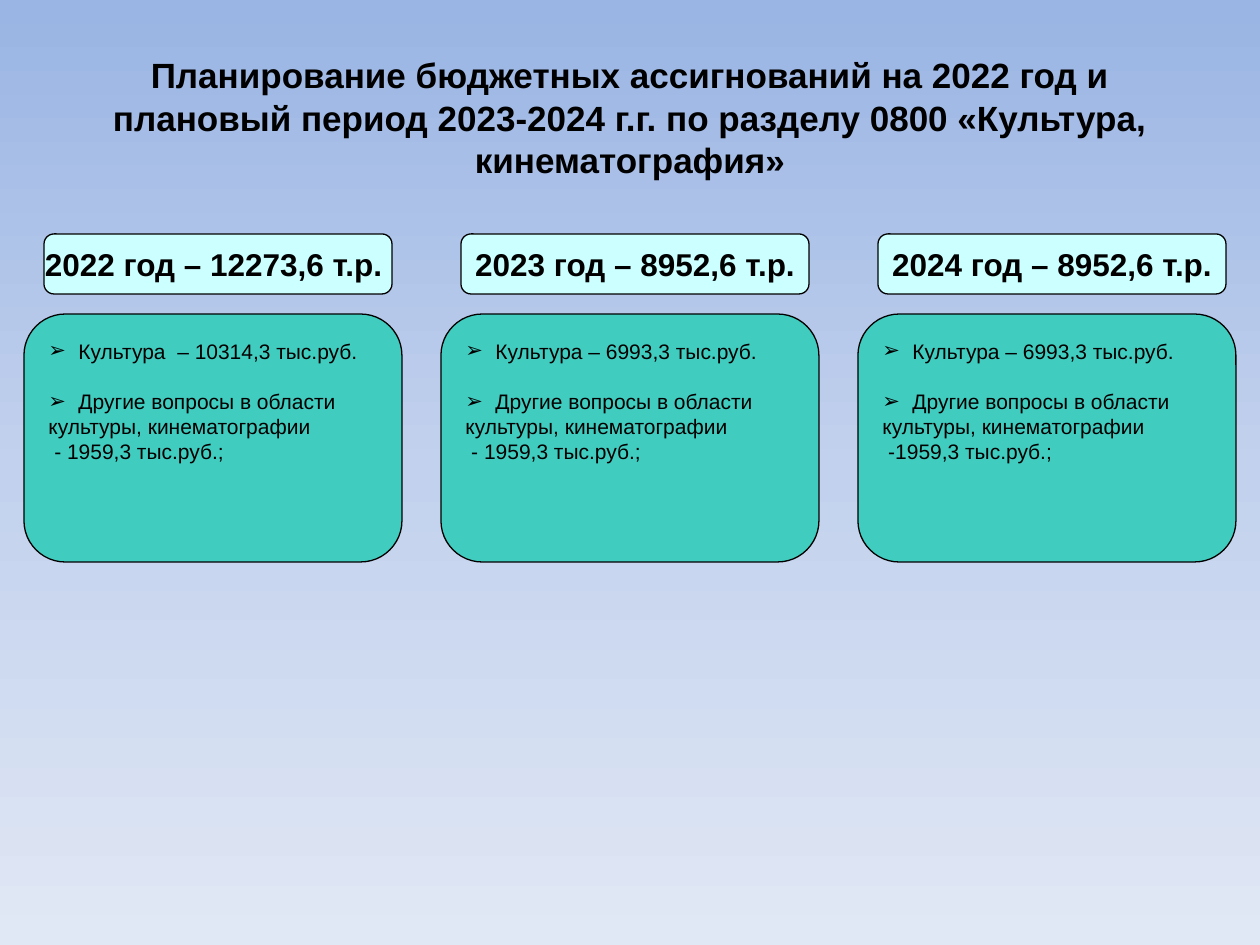
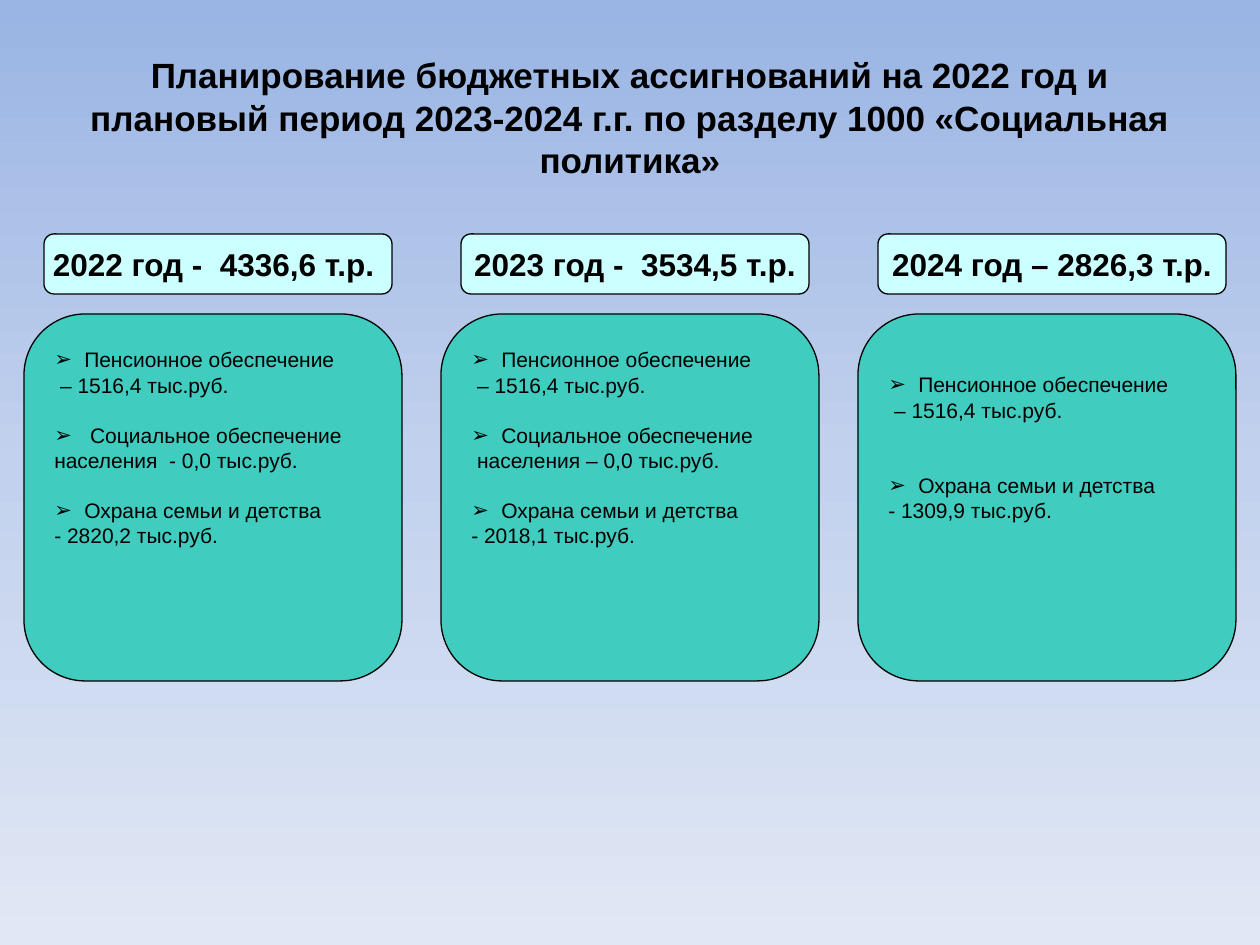
from dataclasses import dataclass
from typing import Any

from lxml import etree
from pptx import Presentation
from pptx import util as u
from pptx.dml.color import RGBColor
from pptx.enum import shapes, text
from pptx.oxml.ns import qn

PX = 914400 / 126
STEP = 417
LINE = 25
CORNER_INSET = 0.29289 * 0.16667


@dataclass(frozen=True)
class Theme:
    font: str = "Arial"
    ink: str = "000000"
    header: str = "CCFFFF"
    body: str = "40CCBF"
    gradient: tuple[tuple[int, str], ...] = ((0, "9AB5E4"), (50, "C2D1ED"), (100, "E1E8F5"))
    title_pt: int = 20
    header_pt: int = 18
    body_pt: int = 12
    line_pt: float = 0.75


@dataclass(frozen=True)
class Box:
    left: int
    top: int
    width: int
    height: int

    def column(self, index: int) -> "Box":
        return Box(self.left + index * STEP, self.top, self.width, self.height)

    def emu(self) -> list[u.Emu]:
        return [px(v) for v in (self.left, self.top, self.width, self.height)]


@dataclass(frozen=True)
class Item:
    heading: str
    details: tuple[str, ...]
    blank_lines: int = 1


@dataclass(frozen=True)
class Year:
    total: str
    items: tuple[Item, ...]
    text_top: int


@dataclass(frozen=True)
class Section:
    name: str
    body_height: int
    years: tuple[Year, ...]


THEME = Theme()
TITLE = Box(63, 38, 1134, 158)
HEADER = Box(44, 234, 348, 60)
BODY_LEFT, BODY_TOP, BODY_WIDTH = 24, 314, 378


def culture(total: str, amount: str, other: str) -> Year:
    return Year(total, (
        Item(f"Культура{amount}", ()),
        Item("Другие вопросы в области", ("культуры, кинематографии", other)),
    ), 24)


PENSION = Item("Пенсионное обеспечение", (" – 1516,4 тыс.руб.",))


def family(amount: str, blank_lines: int = 1) -> Item:
    return Item("Охрана семьи и детства", (f"- {amount} тыс.руб.",), blank_lines)


SECTIONS = (
    Section("0800 «Культура, кинематография»", 248, (
        culture("2022 год – 12273,6 т.р. ", "  – 10314,3 тыс.руб.", " - 1959,3 тыс.руб.;"),
        culture("2023 год – 8952,6 т.р.", " – 6993,3 тыс.руб.", " - 1959,3 тыс.руб.;"),
        culture("2024 год – 8952,6 т.р.", " – 6993,3 тыс.руб.", " -1959,3 тыс.руб.;"),
    )),
    Section("1000 «Социальная политика»", 367, (
        Year("2022 год -  4336,6 т.р. ", (
            PENSION,
            Item(" Социальное обеспечение", ("населения  - 0,0 тыс.руб.",)),
            family("2820,2"),
        ), 33),
        Year("2023 год -  3534,5 т.р.", (
            PENSION,
            Item("Социальное обеспечение", (" населения – 0,0 тыс.руб.",)),
            family("2018,1"),
        ), 33),
        Year("2024 год – 2826,3 т.р.", (PENSION, family("1309,9", 2)), 58),
    )),
)


def px(value: float) -> u.Emu:
    return u.Emu(round(value * PX))


def apply(target: Any, formats: dict[str, Any]) -> None:
    for name, value in formats.items():
        setattr(target, name, value)


def write(p: Any, content: str, size: int, bold: bool = False) -> None:
    r = p.add_run()
    r.text = content
    apply(r.font, {"name": THEME.font, "size": u.Pt(size), "bold": bold})
    r.font.color.rgb = RGBColor.from_string(THEME.ink)


def paint_background(s: Any) -> None:
    fill = s.background.fill
    fill.gradient()
    fill.gradient_angle = 270
    stops = s.element.find(".//" + qn("a:gsLst"))
    for stop in list(stops):
        stops.remove(stop)
    for position, color in THEME.gradient:
        stop = etree.SubElement(stops, qn("a:gs"), pos=str(position * 1000))
        etree.SubElement(stop, qn("a:srgbClr"), val=color)


def add_title(s: Any, name: str) -> None:
    tf = s.shapes.add_textbox(*TITLE.emu()).text_frame
    apply(tf, {"word_wrap": True, "vertical_anchor": text.MSO_ANCHOR.MIDDLE})
    p = tf.paragraphs[0]
    p.alignment = text.PP_ALIGN.CENTER
    content = f"Планирование бюджетных ассигнований на 2022 год и плановый период 2023-2024 г.г. по разделу {name}"
    write(p, content, THEME.title_pt, True)


def add_panel(s: Any, box: Box, color: str) -> Any:
    sp = s.shapes.add_shape(shapes.MSO_SHAPE.ROUNDED_RECTANGLE, *box.emu())
    sp.shadow.inherit = False
    sp.fill.solid()
    sp.fill.fore_color.rgb = RGBColor.from_string(color)
    sp.line.color.rgb = RGBColor.from_string(THEME.ink)
    sp.line.width = u.Pt(THEME.line_pt)
    return sp.text_frame


def add_header(s: Any, box: Box, total: str) -> None:
    tf = add_panel(s, box, THEME.header)
    apply(tf, {"word_wrap": False, "vertical_anchor": text.MSO_ANCHOR.MIDDLE})
    p = tf.paragraphs[0]
    p.alignment = text.PP_ALIGN.CENTER
    write(p, total, THEME.header_pt, True)


def add_bullet(p: Any) -> None:
    pPr = p._p.get_or_add_pPr()
    indent = px(30)
    pPr.set("marL", str(indent))
    pPr.set("indent", str(-indent))
    etree.SubElement(pPr, qn("a:buFont"), typeface=THEME.font)
    etree.SubElement(pPr, qn("a:buChar"), char="➢")


def add_body(s: Any, box: Box, year: Year) -> None:
    tf = add_panel(s, box, THEME.body)
    apply(tf, {
        "word_wrap": True,
        "vertical_anchor": text.MSO_ANCHOR.TOP,
        "margin_top": px(year.text_top - box.height * CORNER_INSET),
    })
    for i, item in enumerate(year.items):
        for j, content in enumerate((item.heading, *item.details)):
            p = tf.add_paragraph() if i or j else tf.paragraphs[0]
            p.alignment = text.PP_ALIGN.LEFT
            if j == 0:
                p.space_before = px(LINE * item.blank_lines if i else 0)
                add_bullet(p)
            write(p, content, THEME.body_pt)


def add_section(prs: Any, section: Section) -> None:
    s = prs.slides.add_slide(prs.slide_layouts[6])
    paint_background(s)
    add_title(s, section.name)
    body = Box(BODY_LEFT, BODY_TOP, BODY_WIDTH, section.body_height)
    for i, year in enumerate(section.years):
        add_header(s, HEADER.column(i), year.total)
        add_body(s, body.column(i), year)


def main() -> None:
    prs = Presentation()
    apply(prs, {"slide_width": px(1260), "slide_height": px(945)})
    for section in SECTIONS:
        add_section(prs, section)
    prs.save("out.pptx")


if __name__ == "__main__":
    main()
